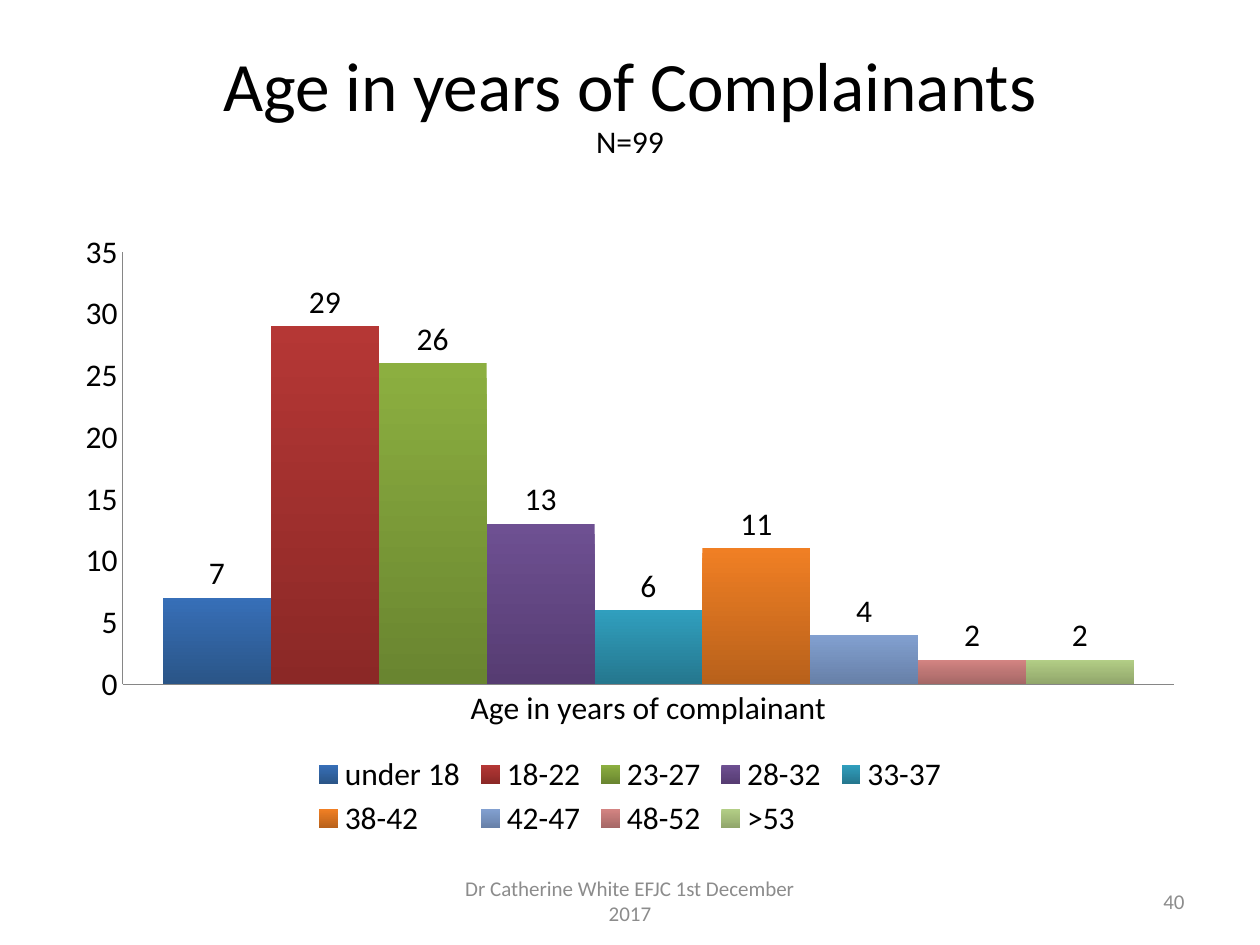
from dataclasses import dataclass

import pptx
import pptx.chart.data
import pptx.dml.color
import pptx.enum.chart
import pptx.enum.text
import pptx.util

Pt = pptx.util.Pt
ALIGN = pptx.enum.text.PP_ALIGN
FONT = "Calibri"


@dataclass
class AgeGroup:
    name: str
    count: int
    top: str
    bottom: str


@dataclass
class FooterItem:
    text: str
    left: float
    width: float
    align: ALIGN


AGE_GROUPS = [
    AgeGroup("under 18", 7, "376FB8", "2A5587"),
    AgeGroup("18-22", 29, "B53735", "8B2826"),
    AgeGroup("23-27", 26, "8CAF40", "698530"),
    AgeGroup("28-32", 13, "6E5092", "563C72"),
    AgeGroup("33-37", 6, "309FBE", "25778E"),
    AgeGroup("38-42", 11, "F07F24", "B8611B"),
    AgeGroup("42-47", 4, "82A0D0", "6780A8"),
    AgeGroup("48-52", 2, "D38482", "A56766"),
    AgeGroup(">53", 2, "B3CE86", "91A66B"),
]
FOOTER = [
    FooterItem("Dr Catherine White EFJC 1st December 2017", 246, 228, ALIGN.CENTER),
    FooterItem("40", 516, 168, ALIGN.RIGHT),
]


def color(value: str) -> pptx.dml.color.RGBColor:
    return pptx.dml.color.RGBColor.from_string(value)


def set_font(font, size: float, value: str = "000000") -> None:
    font.name = FONT
    font.size = Pt(size)
    font.color.rgb = color(value)


def fill_title(title) -> None:
    title.left, title.top, title.width, title.height = Pt(36), Pt(21.6), Pt(648), Pt(90)
    frame = title.text_frame
    frame.vertical_anchor = pptx.enum.text.MSO_ANCHOR.MIDDLE
    frame.margin_bottom = Pt(16)
    para = frame.paragraphs[0]
    para.alignment = ALIGN.CENTER
    para.line_spacing = 0.9
    heading = para.add_run()
    heading.text = "Age in years of Complainants"
    set_font(heading.font, 39.6)
    para.add_line_break()
    sample = para.add_run()
    sample.text = "N=99"
    set_font(sample.font, 18)


def add_age_chart(page, groups: list[AgeGroup]) -> None:
    data = pptx.chart.data.CategoryChartData()
    data.categories = ["Age in years of complainant"]
    for group in groups:
        data.add_series(group.name, [group.count])
    chart = page.shapes.add_chart(
        pptx.enum.chart.XL_CHART_TYPE.COLUMN_CLUSTERED,
        Pt(36), Pt(126), Pt(648), Pt(356.4), data).chart
    set_font(chart.font, 18)
    chart.has_title = False
    chart.has_legend = True
    chart.legend.position = pptx.enum.chart.XL_LEGEND_POSITION.BOTTOM
    chart.legend.include_in_layout = False

    # Axes
    for axis in (chart.category_axis, chart.value_axis):
        axis.has_major_gridlines = False
        axis.major_tick_mark = pptx.enum.chart.XL_TICK_MARK.NONE
        axis.format.line.color.rgb = color("868686")
        axis.format.line.width = Pt(0.75)
    chart.value_axis.minimum_scale = 0
    chart.value_axis.maximum_scale = 35
    chart.value_axis.major_unit = 5

    # Columns shaded from top to bottom, with values above
    plot = chart.plots[0]
    plot.gap_width = 75
    plot.overlap = 0
    plot.vary_by_categories = False
    for series, group in zip(plot.series, groups):
        fill = series.format.fill
        fill.gradient()
        fill.gradient_angle = 270
        for stop, value in zip(fill.gradient_stops, (group.top, group.bottom)):
            stop.color.rgb = color(value)
        labels = series.data_labels
        labels.show_value = True
        labels.position = pptx.enum.chart.XL_LABEL_POSITION.OUTSIDE_END


def add_footer_item(page, item: FooterItem) -> None:
    box = page.shapes.add_textbox(Pt(item.left), Pt(500.4), Pt(item.width), Pt(28.8))
    frame = box.text_frame
    frame.word_wrap = True
    frame.vertical_anchor = pptx.enum.text.MSO_ANCHOR.MIDDLE
    para = frame.paragraphs[0]
    para.text = item.text
    para.alignment = item.align
    set_font(para.font, 12, "8C8C8C")


def main() -> None:
    deck = pptx.Presentation()
    deck.slide_width, deck.slide_height = Pt(720), Pt(540)
    page = deck.slides.add_slide(deck.slide_layouts.get_by_name("Title Only"))
    fill_title(page.shapes.title)
    add_age_chart(page, AGE_GROUPS)
    for item in FOOTER:
        add_footer_item(page, item)
    deck.save("out.pptx")


if __name__ == "__main__":
    main()
